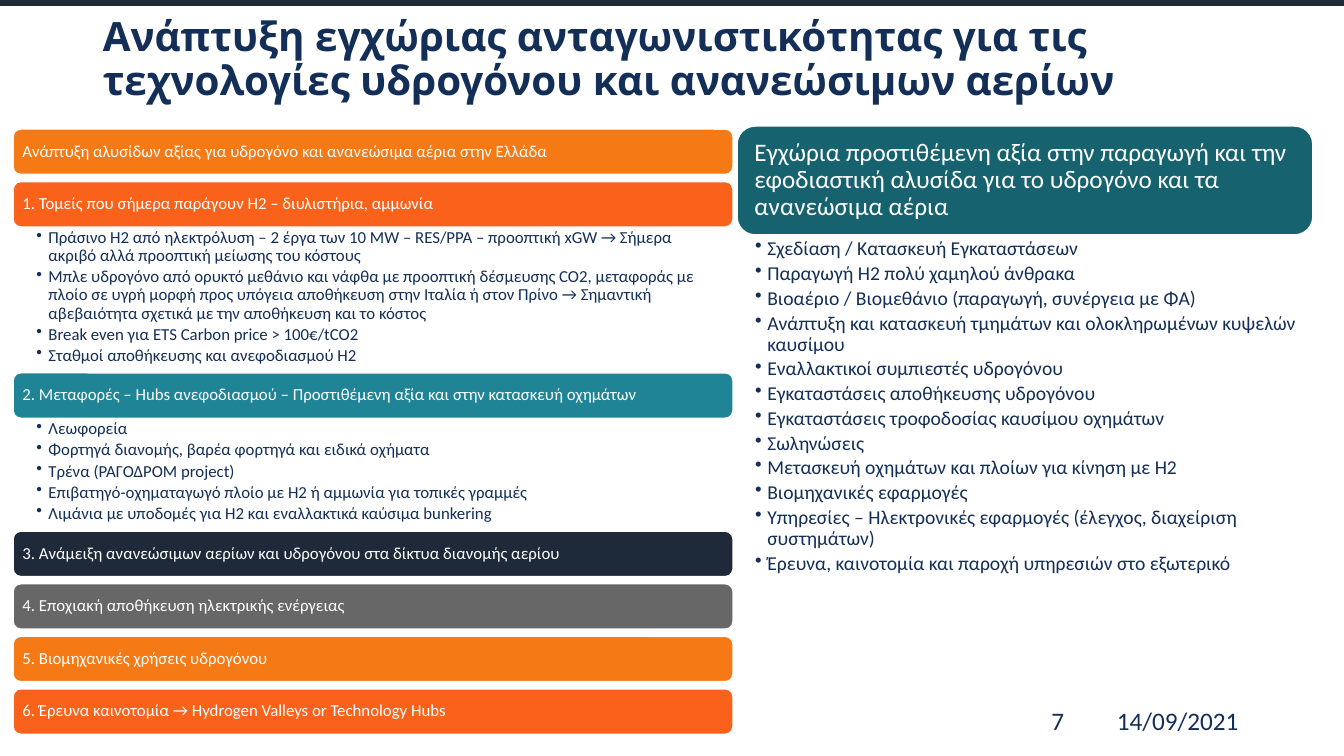
import pptx
import pptx.dml.color
import pptx.enum.shapes
import pptx.enum.text
import pptx.oxml
import pptx.oxml.ns
import pptx.util

WIDTH, HEIGHT = pptx.util.Inches(13.33), pptx.util.Inches(7.5)
COLUMN, ROW = WIDTH / 100, HEIGHT / 100
NAVY, DARK, WHITE = "132E57", "1E2A39", "FFFFFF"
ORANGE, RED, TEAL, DEEP_TEAL, GREY = "F57A16", "FA621C", "1E8496", "16626F", "676767"
BODY_FONT = "Calibri"

TITLE = "Ανάπτυξη εγχώριας ανταγωνιστικότητας για τις τεχνολογίες υδρογόνου και ανανεώσιμων αερίων"
# Heading, fill, bullets, rows taken by the bullets
SECTIONS = [
    ("Ανάπτυξη αλυσίδων αξίας για υδρογόνο και ανανεώσιμα αέρια στην Ελλάδα", ORANGE, [], 0),
    ("1. Τομείς που σήμερα παράγουν Η2 – διυλιστήρια, αμμωνία", RED, [
        "Πράσινο Η2 από ηλεκτρόλυση – 2 έργα των 10 MW – RES/PPA – προοπτική xGW → "
        "Σήμερα ακριβό αλλά προοπτική μείωσης του κόστους",
        "Μπλε υδρογόνο από ορυκτό μεθάνιο και νάφθα με προοπτική δέσμευσης CO2, μεταφοράς "
        "με πλοίο σε υγρή μορφή προς υπόγεια αποθήκευση στην Ιταλία ή στον Πρίνο → "
        "Σημαντική αβεβαιότητα σχετικά με την αποθήκευση και το κόστος",
        "Break even για ETS Carbon price > 100€/tCO2",
        "Σταθμοί αποθήκευσης και ανεφοδιασμού Η2",
    ], 19.3),
    ("2. Μεταφορές – Hubs ανεφοδιασμού – Προστιθέμενη αξία και στην κατασκευή οχημάτων", TEAL, [
        "Λεωφορεία",
        "Φορτηγά διανομής, βαρέα φορτηγά και ειδικά οχήματα",
        "Τρένα (ΡΑΓΟΔΡΟΜ project)",
        "Επιβατηγό-οχηματαγωγό πλοίο με Η2 ή αμμωνία για τοπικές γραμμές",
        "Λιμάνια με υποδομές για Η2 και εναλλακτικά καύσιμα bunkering",
    ], 14.95),
    ("3. Ανάμειξη ανανεώσιμων αερίων και υδρογόνου στα δίκτυα διανομής αερίου", DARK, [], 0),
    ("4. Εποχιακή αποθήκευση ηλεκτρικής ενέργειας", GREY, [], 0),
    ("5. Βιομηχανικές χρήσεις υδρογόνου", ORANGE, [], 0),
    ("6. Έρευνα καινοτομία → Hydrogen Valleys or Technology Hubs", RED, [], 0),
]
VALUE_HEADING = ("Εγχώρια προστιθέμενη αξία στην παραγωγή και την εφοδιαστική αλυσίδα "
                 "για το υδρογόνο και τα ανανεώσιμα αέρια")
VALUE_ITEMS = [
    "Σχεδίαση / Κατασκευή Εγκαταστάσεων",
    "Παραγωγή H2 πολύ χαμηλού άνθρακα",
    "Βιοαέριο / Βιομεθάνιο (παραγωγή, συνέργεια με ΦΑ)",
    "Ανάπτυξη και κατασκευή τμημάτων και ολοκληρωμένων κυψελών καυσίμου",
    "Εναλλακτικοί συμπιεστές υδρογόνου",
    "Εγκαταστάσεις αποθήκευσης υδρογόνου",
    "Εγκαταστάσεις τροφοδοσίας καυσίμου οχημάτων",
    "Σωληνώσεις",
    "Μετασκευή οχημάτων και πλοίων για κίνηση με Η2",
    "Βιομηχανικές εφαρμογές",
    "Υπηρεσίες – Ηλεκτρονικές εφαρμογές (έλεγχος, διαχείριση συστημάτων)",
    "Έρευνα, καινοτομία και παροχή υπηρεσιών στο εξωτερικό",
]


def rgb(color):
    return pptx.dml.color.RGBColor.from_string(color)


def grid(left, top, width, height):
    """Turn columns and rows, each a hundredth of the slide, into lengths."""
    return (pptx.util.Emu(round(left * COLUMN)), pptx.util.Emu(round(top * ROW)),
            pptx.util.Emu(round(width * COLUMN)), pptx.util.Emu(round(height * ROW)))


def set_insets(frame, left, top, right, bottom):
    frame.margin_left, frame.margin_top = pptx.util.Inches(left), pptx.util.Inches(top)
    frame.margin_right, frame.margin_bottom = pptx.util.Inches(right), pptx.util.Inches(bottom)


def style(para, size, color, font=BODY_FONT, bold=False, spacing=0.9):
    para.alignment = pptx.enum.text.PP_ALIGN.LEFT
    para.line_spacing = spacing
    para.font.name, para.font.size, para.font.bold = font, pptx.util.Pt(size), bold
    para.font.color.rgb = rgb(color)


def add_bullet(para):
    properties = para._p.get_or_add_pPr()
    indent = pptx.util.Inches(0.12)
    properties.set("marL", str(indent))
    properties.set("indent", str(-indent))
    bullet = pptx.oxml.parse_xml(
        f'<a:buChar {pptx.oxml.ns.nsdecls("a")} char="•"/>')
    properties.insert_element_before(bullet, "a:tabLst", "a:defRPr", "a:extLst")


def add_block(page, kind, area, fill, line):
    block = page.shapes.add_shape(kind, *grid(*area))
    block.shadow.inherit = False
    block.fill.solid()
    block.fill.fore_color.rgb = rgb(fill)
    block.line.color.rgb = rgb(line)
    block.line.width = pptx.util.Pt(1)
    return block


def add_heading(page, area, text, fill, size, inset):
    bar = add_block(page, pptx.enum.shapes.MSO_SHAPE.ROUNDED_RECTANGLE, area, fill, WHITE)
    frame = bar.text_frame
    frame.word_wrap = True
    frame.vertical_anchor = pptx.enum.text.MSO_ANCHOR.MIDDLE
    set_insets(frame, inset, 0.05, inset, 0.05)
    frame.text = text
    style(frame.paragraphs[0], size, WHITE)


def add_list(page, area, items, size, insets):
    frame = page.shapes.add_textbox(*grid(*area)).text_frame
    frame.word_wrap = True
    set_insets(frame, *insets)
    frame.text = "\n".join(items)
    for para in frame.paragraphs:
        style(para, size, NAVY)
        para.space_after = pptx.util.Pt(0.18 * size)
        add_bullet(para)


def add_footer(page, area, text):
    frame = page.shapes.add_textbox(*grid(*area)).text_frame
    frame.word_wrap = True
    frame.text = text
    style(frame.paragraphs[0], 18, NAVY, spacing=1.0)


def add_title(page):
    title = page.shapes.title
    title.left, title.top, title.width, title.height = grid(6.9, 3.6, 86.27, 8.8)
    frame = title.text_frame
    frame.text = TITLE
    frame.word_wrap = True
    frame.auto_size = pptx.enum.text.MSO_AUTO_SIZE.NONE
    frame.vertical_anchor = pptx.enum.text.MSO_ANCHOR.MIDDLE
    style(frame.paragraphs[0], 28.8, NAVY, "Open Sans", True)


def add_sections(page):
    """Stack the headings, each followed by its bullets or by a gap."""
    left, width, bar_rows, gap_rows = 0.98, 53.56, 6, 0.95
    top = 17.07
    for heading, fill, items, list_rows in SECTIONS:
        add_heading(page, (left, top, width, bar_rows), heading, fill, 12, 0.07)
        top += bar_rows
        if items:
            add_list(page, (left, top, width, list_rows), items, 12, (0.23, 0.02, 0.09, 0.02))
        top += list_rows or gap_rows


def main():
    deck = pptx.Presentation()
    deck.slide_width, deck.slide_height = WIDTH, HEIGHT
    page = deck.slides.add_slide(deck.slide_layouts.get_by_name("Title Only"))
    add_block(page, pptx.enum.shapes.MSO_SHAPE.RECTANGLE, (0, 0, 100, 0.67), DARK, DARK)
    add_title(page)
    add_sections(page)
    add_footer(page, (82.37, 92.67, 14, 5.33), "14/09/2021")
    add_footer(page, (77.5, 92.67, 4, 5.33), "7")
    add_heading(page, (54.84, 16.67, 42.84, 14.4), VALUE_HEADING, DEEP_TEAL, 18, 0.12)
    add_list(page, (54.84, 31.2, 42.84, 47.87), VALUE_ITEMS, 14, (0.18, 0.03, 0.14, 0.03))
    deck.save("out.pptx")


if __name__ == "__main__":
    main()
